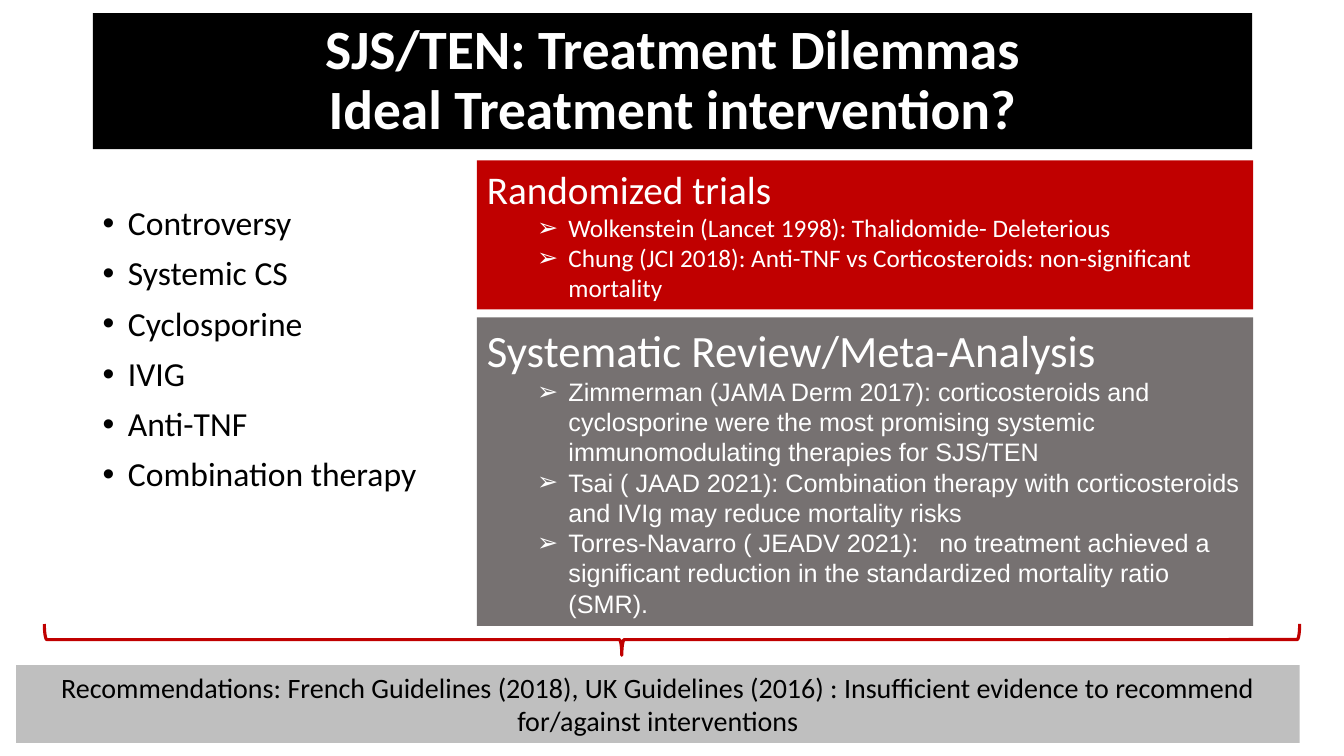
from lxml.etree import SubElement
from pptx import Presentation
from pptx.dml.color import RGBColor
from pptx.enum.shapes import MSO_SHAPE
from pptx.enum.text import MSO_ANCHOR, MSO_AUTO_SIZE, PP_ALIGN
from pptx.oxml.ns import qn
from pptx.util import Pt

PX = 9144

TITLE = "SJS/TEN: Treatment Dilemmas\vIdeal Treatment intervention?"
TREATMENTS = ["Controversy", "Systemic CS", "Cyclosporine", "IVIG", "Anti-TNF",
              "Combination therapy"]
EVIDENCE = [
    {"heading": "Randomized trials", "size": 28, "align": PP_ALIGN.LEFT,
     "fill": "C00000", "font": "Calibri", "height": 148,
     "studies": [
         "Wolkenstein (Lancet 1998): Thalidomide- Deleterious",
         "Chung (JCI 2018): Anti-TNF vs Corticosteroids: non-significant mortality"]},
    {"heading": "Systematic Review/Meta-Analysis", "size": 32, "align": PP_ALIGN.JUSTIFY,
     "fill": "767171", "font": "Arial", "height": 306,
     "studies": [
         "Zimmerman (JAMA Derm 2017): corticosteroids and cyclosporine were the most "
         "promising systemic immunomodulating therapies for SJS/TEN",
         "Tsai ( JAAD 2021): Combination therapy with corticosteroids and IVIg may "
         "reduce mortality risks",
         "Torres-Navarro ( JEADV 2021):   no treatment achieved a significant reduction "
         "in the standardized mortality ratio (SMR)."]},
]
RECOMMENDATION = ("Recommendations: French Guidelines (2018), UK Guidelines (2016) : "
                  "Insufficient evidence to recommend for/against interventions")

EVIDENCE_LEFT, EVIDENCE_TOP, EVIDENCE_WIDTH, EVIDENCE_GAP = 473, 159, 770, 8


def color(value):
    return RGBColor.from_string(value)


def place(*lengths):
    return [length * PX for length in lengths]


def paint(shape, fill):
    shape.fill.solid()
    shape.fill.fore_color.rgb = color(fill)


def style(paragraph, size, font, ink, align=PP_ALIGN.LEFT, bold=False):
    paragraph.alignment = align
    paragraph.font.size = Pt(size)
    paragraph.font.name = font
    paragraph.font.bold = bold
    paragraph.font.color.rgb = color(ink)


def add_bullet(paragraph, mark, margin, hanging):
    properties = paragraph._p.get_or_add_pPr()
    properties.set("marL", str(margin * PX))
    properties.set("indent", str(-hanging * PX))
    SubElement(properties, qn("a:buFont"), typeface="Arial")
    SubElement(properties, qn("a:buChar"), char=mark)


def add_box(slide, box, lines, fill=None):
    panel = slide.shapes.add_textbox(*place(*box))
    if fill:
        paint(panel, fill)
    frame = panel.text_frame
    frame.word_wrap = True
    frame.text = "\n".join(lines)
    return frame.paragraphs


def add_title(slide):
    title = slide.shapes.title
    title.left, title.top, title.width, title.height = place(92, 13, 1150, 135)
    paint(title, "000000")
    frame = title.text_frame
    frame.text = TITLE
    frame.word_wrap = True
    frame.auto_size = MSO_AUTO_SIZE.NONE
    frame.vertical_anchor = MSO_ANCHOR.MIDDLE
    headline = frame.paragraphs[0]
    headline.line_spacing = 0.9
    style(headline, 39.6, "Calibri", "FFFFFF", PP_ALIGN.CENTER, True)


def add_treatments(slide):
    for index, item in enumerate(add_box(slide, (92, 200, 382, 403), TREATMENTS)):
        add_bullet(item, "•", 25, 25)
        item.line_spacing = 0.9
        item.space_before = Pt(10 if index else 0)
        style(item, 24, "Calibri", "000000")


def add_evidence(slide):
    top = EVIDENCE_TOP
    for group in EVIDENCE:
        box = EVIDENCE_LEFT, top, EVIDENCE_WIDTH, group["height"]
        heading, *studies = add_box(slide, box, [group["heading"], *group["studies"]],
                                    group["fill"])
        style(heading, group["size"], "Calibri", "FFFFFF", group["align"])
        for study in studies:
            study.level = 1
            add_bullet(study, "➢", 81, 31)
            style(study, 18, group["font"], "FFFFFF")
        top += group["height"] + EVIDENCE_GAP


def add_conclusion(slide):
    brace = slide.shapes.add_shape(MSO_SHAPE.LEFT_BRACE, *place(651, 12, 31, 1245))
    brace.rotation = 270
    brace.adjustments[0] = 0.08
    brace.adjustments[1] = 0.46
    brace.shadow.inherit = False
    brace.fill.background()
    brace.line.color.rgb = color("C00000")
    brace.line.width = Pt(2.25)
    recommendation = add_box(slide, (16, 660, 1273, 77), [RECOMMENDATION], "BFBFBF")[0]
    style(recommendation, 20, "Calibri", "000000", PP_ALIGN.CENTER)


def main():
    deck = Presentation()
    deck.slide_width, deck.slide_height = place(1333, 750)
    slide = deck.slides.add_slide(deck.slide_layouts[5])
    add_title(slide)
    add_treatments(slide)
    add_evidence(slide)
    add_conclusion(slide)
    deck.save("out.pptx")


if __name__ == "__main__":
    main()
